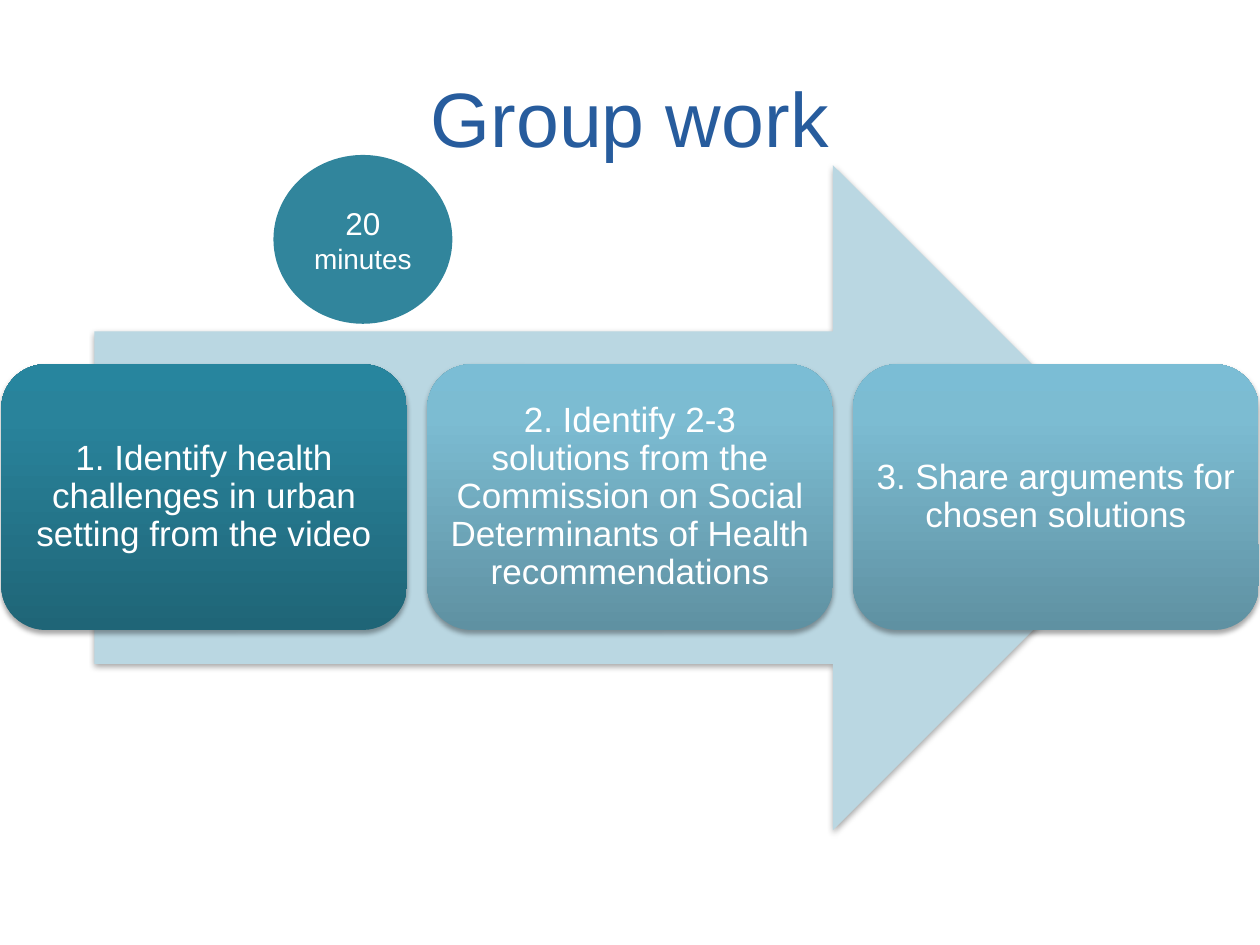
"""Build the group work slide: a title, a timer and three steps along an arrow."""
from dataclasses import dataclass

from lxml.etree import SubElement
from pptx import Presentation
from pptx.dml.color import RGBColor
from pptx.enum.shapes import MSO_SHAPE
from pptx.enum.text import MSO_ANCHOR, PP_ALIGN
from pptx.oxml.ns import qn
from pptx.util import Inches, Pt


@dataclass(frozen=True)
class Theme:
    face: str = "Arial"
    title: str = "275C9D"
    arrow: str = "BAD7E2"
    timer: str = "31859C"
    text: str = "FFFFFF"
    dark: tuple = ((0, "1F6577"), (80, "29839B"), (100, "27859E"))
    light: tuple = ((0, "5F91A2"), (80, "7CBCD2"), (100, "7BBDD5"))
    head: int = 44
    body: int = 20
    count: int = 18
    unit: int = 16


@dataclass(frozen=True)
class Step:
    text: str
    stops: tuple


THEME = Theme()
STEPS = (
    Step("1. Identify health challenges in urban setting from the video", THEME.dark),
    Step("2. Identify 2-3 solutions from the Commission on Social "
         "Determinants of Health recommendations", THEME.light),
    Step("3. Share arguments for chosen solutions", THEME.light),
)
LEFT, TOP, WIDTH, HEIGHT, PITCH = 0.01, 2.89, 3.22, 2.11, 3.38


def add_form(slide, kind: MSO_SHAPE, left: float, top: float, width: float, height: float):
    form = slide.shapes.add_shape(
        kind, Inches(left), Inches(top), Inches(width), Inches(height))
    form.shadow.inherit = False
    form.line.fill.background()
    return form


def fill_flat(form, color: str) -> None:
    form.fill.solid()
    form.fill.fore_color.rgb = RGBColor.from_string(color)


def fill_blend(form, stops: tuple) -> None:
    form.fill.gradient()
    form.fill.gradient_angle = 90
    ramp = form._element.spPr.find(qn("a:gradFill")).find(qn("a:gsLst"))
    for old in list(ramp):
        ramp.remove(old)
    for place, color in stops:
        stop = SubElement(ramp, qn("a:gs"), pos=str(place * 1000))
        SubElement(stop, qn("a:srgbClr"), val=color)


def cast_shadow(form) -> None:
    effects = form._element.spPr.find(qn("a:effectLst"))
    shade = SubElement(effects, qn("a:outerShdw"), blurRad=str(Pt(3.1)),
                       dist=str(Pt(1.8)), dir="5400000", rotWithShape="0")
    color = SubElement(shade, qn("a:srgbClr"), val="000000")
    SubElement(color, qn("a:alpha"), val="35000")


def set_text(form, text: str, size: int, color: str):
    frame = form.text_frame
    frame.word_wrap = True
    frame.vertical_anchor = MSO_ANCHOR.MIDDLE
    para = frame.paragraphs[0]
    para.alignment = PP_ALIGN.CENTER
    para.add_run().text = text
    para.font.name = THEME.face
    para.font.size = Pt(size)
    para.font.color.rgb = RGBColor.from_string(color)
    return para


def add_step(slide, index: int, step: Step) -> None:
    form = add_form(slide, MSO_SHAPE.ROUNDED_RECTANGLE,
                    LEFT + index * PITCH, TOP, WIDTH, HEIGHT)
    fill_blend(form, step.stops)
    cast_shadow(form)
    frame = form.text_frame
    frame.margin_left = frame.margin_right = Inches(0.08)
    frame.margin_top = frame.margin_bottom = Inches(0.08)
    set_text(form, step.text, THEME.body, THEME.text).line_spacing = 0.9


def add_timer(slide) -> None:
    form = add_form(slide, MSO_SHAPE.OVAL, 2.17, 1.23, 1.42, 1.34)
    fill_flat(form, THEME.timer)
    para = set_text(form, "20 ", THEME.count, THEME.text)
    unit = para.add_run()
    unit.text = "minutes"
    unit.font.size = Pt(THEME.unit)


def main() -> None:
    deck = Presentation()
    deck.slide_width, deck.slide_height = Inches(10), Inches(7.5)
    slide = deck.slides.add_slide(deck.slide_layouts[6])
    title = slide.shapes.add_textbox(Inches(0.5), Inches(0.3), Inches(9), Inches(1.25))
    set_text(title, "Group work", THEME.head, THEME.title)
    arrow = add_form(slide, MSO_SHAPE.RIGHT_ARROW, 0.75, 1.31, 8.5, 5.28)
    fill_flat(arrow, THEME.arrow)
    cast_shadow(arrow)
    for index, step in enumerate(STEPS):
        add_step(slide, index, step)
    add_timer(slide)
    deck.save("out.pptx")


if __name__ == "__main__":
    main()
